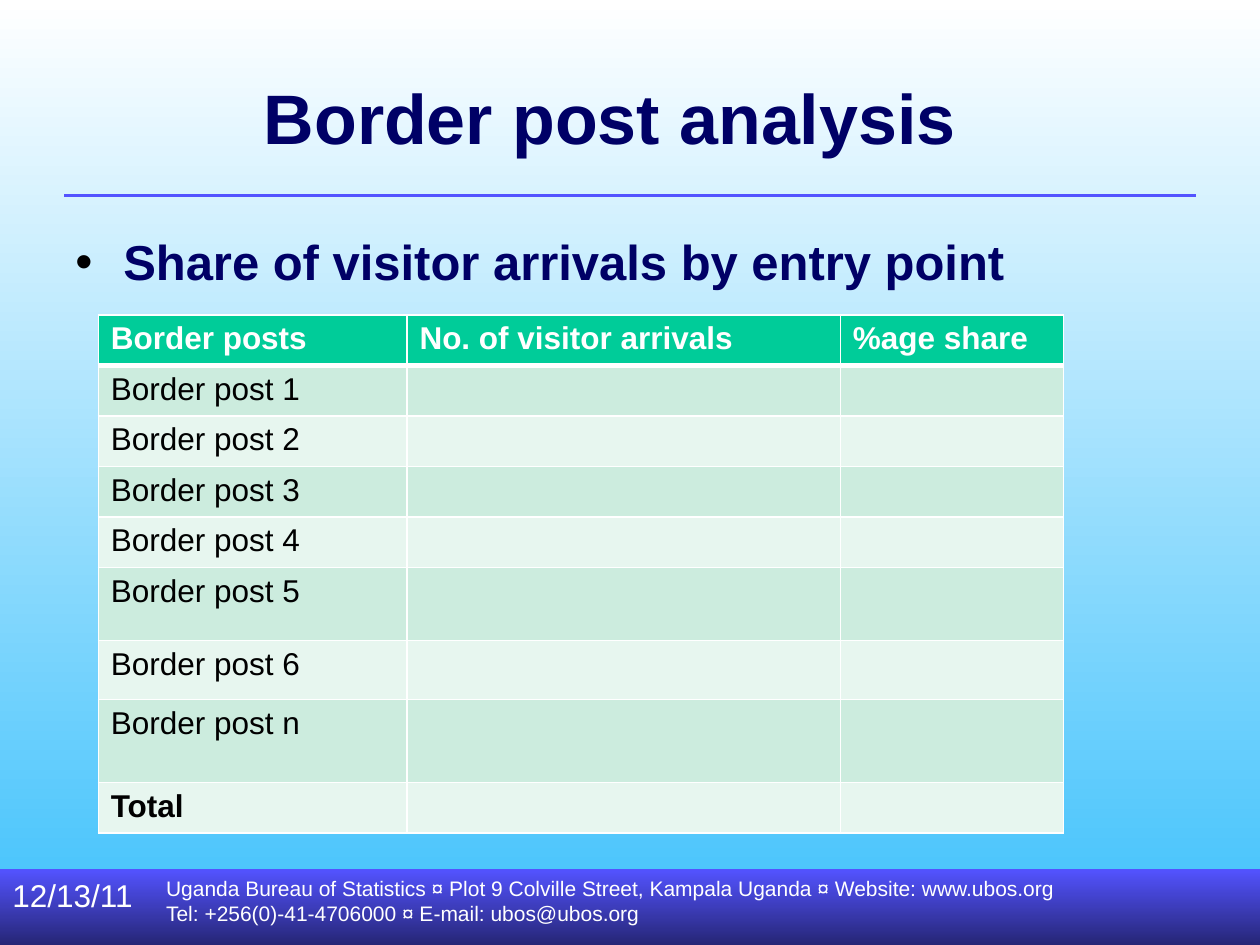
from lxml import etree
from pptx import Presentation
from pptx.dml.color import RGBColor
from pptx.enum.shapes import MSO_CONNECTOR, MSO_SHAPE
from pptx.enum.text import MSO_ANCHOR, PP_ALIGN
from pptx.oxml import parse_xml
from pptx.oxml.ns import nsdecls, qn
from pptx.util import Inches, Pt

RECT, LINE = MSO_SHAPE.RECTANGLE, MSO_CONNECTOR.STRAIGHT
MIDDLE, TOP = MSO_ANCHOR.MIDDLE, MSO_ANCHOR.TOP
CENTER, LEFT, JUSTIFY = PP_ALIGN.CENTER, PP_ALIGN.LEFT, PP_ALIGN.JUSTIFY
rgb = RGBColor.from_string
NAVY, WHITE, BLACK, VIOLET = "000066", "FFFFFF", "000000", "5353FF"


def gradient(fill, *colors):
    fill.gradient()
    fill.gradient_angle = 270
    for stop, color in zip(fill.gradient_stops, colors):
        stop.color.rgb = rgb(color)


def write(tf, lines, size, color, bold=False, align=LEFT):
    for i, line in enumerate(lines):
        p = tf.paragraphs[0] if i == 0 else tf.add_paragraph()
        p.alignment = align
        r = p.add_run()
        r.text = line
        for name, value in {"name": "Arial", "size": Pt(size), "bold": bold}.items():
            setattr(r.font, name, value)
        r.font.color.rgb = rgb(color)


prs = Presentation()
prs.slide_width, prs.slide_height = Inches(10), Inches(7.5)
s = prs.slides.add_slide(prs.slide_layouts[5])
gradient(s.background.fill, WHITE, "3EC1FC")

band = s.shapes.add_shape(RECT, 0, Inches(6.9), Inches(10), Inches(0.6))
band.shadow.inherit = False
band.line.fill.background()
gradient(band.fill, VIOLET, "262676")

rule = s.shapes.add_connector(LINE, Inches(0.51), Inches(1.55), Inches(9.49), Inches(1.55))
rule.line.color.rgb = rgb(VIOLET)
rule.line.width = Pt(1.5)
etree.SubElement(rule._element.spPr, qn("a:effectLst"))

title = s.shapes.title
box = {"left": 0.5, "top": 0.14, "width": 8.99, "height": 1.57}
for name, value in box.items():
    setattr(title, name, Inches(value))
tf = title.text_frame
tf.vertical_anchor = MIDDLE
tf.margin_right = Inches(0.41)
write(tf, ["Border post analysis"], 40, NAVY, True, CENTER)

texts = [
    ((0.5, 1.75, 8.99, 5.1), ["Share of visitor arrivals by entry point"], 28, NAVY, True, JUSTIFY),
    ((0, 6.9, 1.22, 0.6), ["12/13/11"], 18, WHITE, False, LEFT),
    ((1.22, 6.9, 7.79, 0.6), [
        "Uganda Bureau of Statistics ¤ Plot 9 Colville Street, Kampala Uganda ¤ Website: www.ubos.org",
        "Tel: +256(0)-41-4706000 ¤ E-mail: ubos@ubos.org"], 12, WHITE, False, LEFT),
]
for place, lines, size, color, bold, align in texts:
    sp = s.shapes.add_textbox(*map(Inches, place))
    tf = sp.text_frame
    tf.word_wrap = True
    tf.vertical_anchor = TOP
    write(tf, lines, size, color, bold, align)
    if align == JUSTIFY:
        tf.margin_top = Inches(0.09)
        pPr = tf.paragraphs[0]._p.get_or_add_pPr()
        pPr.set("marL", str(Inches(0.38)))
        pPr.set("indent", str(-Inches(0.38)))
        pPr.append(parse_xml(f'<a:buClr {nsdecls("a")}><a:srgbClr val="{BLACK}"/></a:buClr>'))
        pPr.append(parse_xml(f'<a:buFont {nsdecls("a")} typeface="Arial"/>'))
        pPr.append(parse_xml(f'<a:buChar {nsdecls("a")} char="•"/>'))

headers = ["Border posts", "No. of visitor arrivals", "%age share"]
posts = [f"Border post {n}" for n in (1, 2, 3, 4, 5, 6, "n")]
rows = [headers] + [[label, "", ""] for label in posts + ["Total"]]
widths = [2.45, 3.44, 1.77]
heights = [0.38] * 5 + [0.58, 0.47, 0.66, 0.38]
frame = s.shapes.add_table(len(rows), len(widths), Inches(0.78), Inches(2.5),
                           Inches(sum(widths)), Inches(sum(heights)))
table = frame.table
for column, width in zip(table.columns, widths):
    column.width = Inches(width)
for i, (row, height) in enumerate(zip(rows, heights)):
    table.rows[i].height = Inches(height)
    for j, text in enumerate(row):
        cell = table.cell(i, j)
        thick = {0: "lnB", 1: "lnT"}.get(i)
        tcPr = cell._tc.get_or_add_tcPr()
        for side in ("lnL", "lnR", "lnT", "lnB"):
            width = Pt(3 if side == thick else 1)
            tcPr.append(parse_xml(
                f'<a:{side} {nsdecls("a")} w="{width}"><a:solidFill>'
                f'<a:srgbClr val="{WHITE}"/></a:solidFill></a:{side}>'))
        cell.fill.solid()
        cell.fill.fore_color.rgb = rgb("00CC99" if i == 0 else "CCECDE" if i % 2 else "E7F6EF")
        if text:
            write(cell.text_frame, [text], 18, BLACK if i else WHITE, i in (0, len(rows) - 1))

prs.save("out.pptx")
